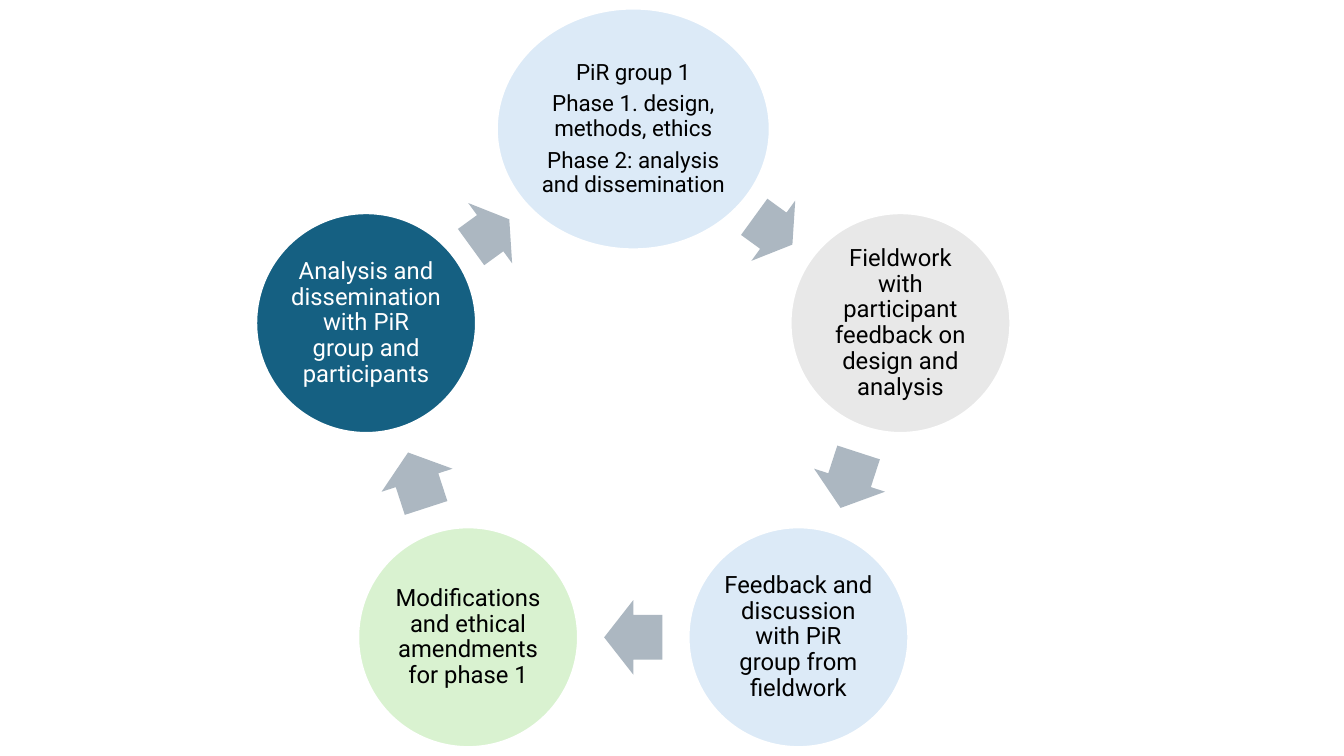
"""Draws the five-stage research cycle as one slide."""
from dataclasses import dataclass
from math import cos, radians, sin

from pptx import Presentation
from pptx import util as u
from pptx.dml.color import RGBColor
from pptx.enum import shapes, text


@dataclass(frozen=True)
class Theme:
    """Colours, font and type sizes."""
    font: str = "Roboto"
    large: float = 17
    small: float = 16
    black: str = "000000"
    white: str = "FFFFFF"
    sky: str = "DCEAF7"
    grey: str = "E8E8E8"
    green: str = "D9F2D0"
    teal: str = "156082"
    steel: str = "ACB7C1"


class Cycle:
    """Holds the theme and the slide, and places shapes around a ring."""

    def __init__(self, theme, slide, mid):
        """Keep the theme, the slide and the ring centre."""
        self.theme, self.slide, self.mid = theme, slide, mid

    def place(self, kind, size, ring, angle, fill):
        """Add a filled shape at a clockwise angle from the top of a ring."""
        wide, high = size
        turn = radians(angle)
        left = self.mid[0] + ring * sin(turn) - wide / 2
        top = self.mid[1] - ring * cos(turn) - high / 2
        shape = self.slide.shapes.add_shape(
            kind, u.Cm(left), u.Cm(top), u.Cm(wide), u.Cm(high))
        shape.shadow.inherit = False
        shape.fill.solid()
        shape.fill.fore_color.rgb = RGBColor.from_string(fill)
        return shape

    def stage(self, angle, size, fill, ink, points, lines):
        """Add a circle with centred text."""
        disc = self.place(shapes.MSO_SHAPE.OVAL, size, 7.08, angle, fill)
        disc.line.color.rgb = RGBColor.from_string(self.theme.white)
        disc.line.width = u.Pt(1.5)
        frame = disc.text_frame
        frame.word_wrap = True
        frame.vertical_anchor = text.MSO_ANCHOR.MIDDLE
        frame.margin_left = frame.margin_right = u.Cm(0.05)
        frame.margin_top = frame.margin_bottom = u.Cm(0.05)
        for place, line in enumerate(lines):
            para = frame.add_paragraph() if place else frame.paragraphs[0]
            para.alignment = text.PP_ALIGN.CENTER
            para.line_spacing = 0.9
            para.space_after = u.Pt(5.5)
            run = para.add_run()
            run.text = line
            run.font.name = self.theme.font
            run.font.size = u.Pt(points)
            run.font.color.rgb = RGBColor.from_string(ink)

    def arrow(self, angle, turn, wide):
        """Add a block arrow turned along the ring."""
        arrow = self.place(shapes.MSO_SHAPE.RIGHT_ARROW, (wide, 1.88),
                           5.73, angle, self.theme.steel)
        arrow.line.fill.background()
        arrow.adjustments[0] = 0.6
        arrow.adjustments[1] = 0.5
        arrow.rotation = turn


def main():
    """Build and save the slide."""
    deck = Presentation()
    deck.slide_width, deck.slide_height = u.Cm(33.87), u.Cm(19.05)
    slide = deck.slides.add_slide(deck.slide_layouts[6])
    theme = Theme()
    cycle = Cycle(theme, slide, (15.96, 10.33))
    big, disc = (6.88, 6.07), (5.54, 5.54)
    short, long = 1.19, 1.47
    steps = [
        (big, theme.sky, theme.black, theme.small,
         ["PiR group 1", "Phase 1. design, methods, ethics",
          "Phase 2: analysis and dissemination"], 38, short),
        (disc, theme.grey, theme.black, theme.large,
         ["Fieldwork with participant feedback on design and analysis"],
         108, long),
        (disc, theme.sky, theme.black, theme.large,
         ["Feedback and discussion with PiR group from fieldwork"],
         180, long),
        (disc, theme.green, theme.black, theme.large,
         ["Modifications and ethical amendments for phase 1"], 252, long),
        (disc, theme.teal, theme.white, theme.large,
         ["Analysis and dissemination with PiR group and participants"],
         321, short),
    ]
    gap = 360 / len(steps)
    for place, (size, fill, ink, points, lines, angle, wide) in enumerate(steps):
        cycle.stage(place * gap, size, fill, ink, points, lines)
        cycle.arrow(angle, (place + 0.5) * gap, wide)
    deck.save("out.pptx")


if __name__ == "__main__":
    main()
